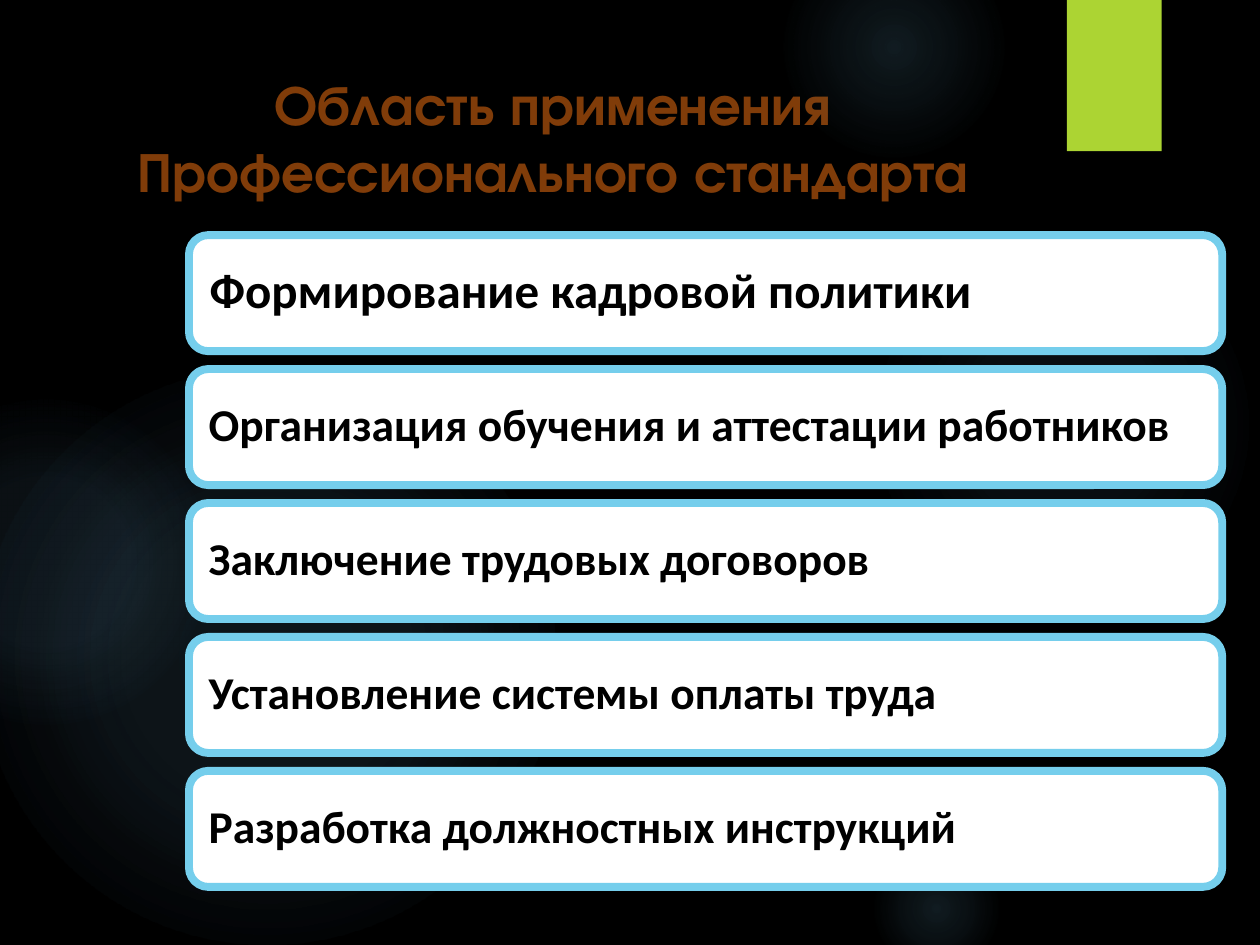
from dataclasses import dataclass

from pptx import Presentation
from pptx.dml.color import RGBColor
from pptx.enum.shapes import MSO_SHAPE
from pptx.enum.text import MSO_ANCHOR, PP_ALIGN
from pptx.oxml import parse_xml
from pptx.oxml.ns import nsdecls, qn
from pptx.util import Cm, Pt


@dataclass(frozen=True)
class Theme:
    background: str = "000000"
    glow: str = "7AC4F0"
    accent: str = "ACD433"
    title: str = "803C09"
    box_fill: str = "FFFFFF"
    box_line: str = "75CEEC"
    box_text: str = "000000"
    title_font: str = "TeX Gyre Adventor"
    box_font: str = "Calibri"
    title_size: int = 32
    lead_size: int = 28
    item_size: int = 26
    line_width: float = 4.5


def write_text(shape, text, *, font, size, color, align, anchor, inset, spacing=1.0):
    frame = shape.text_frame
    frame.word_wrap = True
    frame.vertical_anchor = anchor
    frame.margin_left = frame.margin_right = inset
    frame.margin_top = frame.margin_bottom = inset
    paragraph = frame.paragraphs[0]
    paragraph.alignment = align
    paragraph.line_spacing = spacing
    run = paragraph.add_run()
    run.text = text
    run.font.name = font
    run.font.size = Pt(size)
    run.font.bold = True
    run.font.color.rgb = RGBColor.from_string(color)


def fill_with_glow(shape, color, stops):
    stop_list = "".join(
        f'<a:gs pos="{position * 1000}"><a:srgbClr val="{color}">'
        f'<a:alpha val="{opacity * 1000}"/></a:srgbClr></a:gs>'
        for position, opacity in stops
    )
    gradient = parse_xml(
        f'<a:gradFill {nsdecls("a")} rotWithShape="1"><a:gsLst>{stop_list}</a:gsLst>'
        '<a:path path="circle"><a:fillToRect l="50000" t="50000" r="50000" b="50000"/>'
        "</a:path></a:gradFill>"
    )
    shape.fill.background()
    properties = shape._element.spPr
    properties.replace(properties.find(qn("a:noFill")), gradient)


theme = Theme()
presentation = Presentation()
presentation.slide_width = Cm(25.4)
presentation.slide_height = Cm(19.05)
slide = presentation.slides.add_slide(presentation.slide_layouts[5])
slide.background.fill.solid()
slide.background.fill.fore_color.rgb = RGBColor.from_string(theme.background)

glows = [
    (17.5, 4.65, 7.82, [(0, 7), (36, 6), (69, 0)]),
    (15.8, -1.27, 4.45, [(0, 14), (36, 7), (73, 0)]),
    (17.5, 16.94, 2.74, [(0, 14), (36, 7), (66, 0)]),
    (-0.43, 7.42, 11.63, [(0, 11), (36, 10), (75, 0)]),
    (-2.34, 8.05, 6.55, [(0, 8), (36, 8), (72, 0)]),
]
for left, top, diameter, stops in glows:
    glow = slide.shapes.add_shape(
        MSO_SHAPE.OVAL, Cm(left), Cm(top), Cm(diameter), Cm(diameter)
    )
    glow.shadow.inherit = False
    glow.line.fill.background()
    fill_with_glow(glow, theme.glow, stops)

accent = slide.shapes.add_shape(
    MSO_SHAPE.RECTANGLE, Cm(21.51), Cm(0), Cm(1.91), Cm(3.05)
)
accent.shadow.inherit = False
accent.fill.solid()
accent.fill.fore_color.rgb = RGBColor.from_string(theme.accent)
accent.line.fill.background()

title = slide.shapes.title
title.left, title.top, title.width, title.height = Cm(1.35), Cm(1.27), Cm(19.6), Cm(3.89)
write_text(
    title,
    "Область применения Профессионального стандарта",
    font=theme.title_font,
    size=theme.title_size,
    color=theme.title,
    align=PP_ALIGN.CENTER,
    anchor=MSO_ANCHOR.TOP,
    inset=Cm(0.13),
)

applications = [
    ("Формирование кадровой политики", theme.lead_size),
    ("Организация обучения и аттестации работников", theme.item_size),
    ("Заключение трудовых договоров", theme.item_size),
    ("Установление системы оплаты труда", theme.item_size),
    ("Разработка должностных инструкций", theme.item_size),
]
first_top, pitch = 4.74, 2.7
for index, (text, size) in enumerate(applications):
    box = slide.shapes.add_shape(
        MSO_SHAPE.ROUNDED_RECTANGLE,
        Cm(3.81), Cm(first_top + index * pitch), Cm(20.83), Cm(2.34),
    )
    box.shadow.inherit = False
    box.fill.solid()
    box.fill.fore_color.rgb = RGBColor.from_string(theme.box_fill)
    box.line.color.rgb = RGBColor.from_string(theme.box_line)
    box.line.width = Pt(theme.line_width)
    write_text(
        box,
        text,
        font=theme.box_font,
        size=size,
        color=theme.box_text,
        align=PP_ALIGN.LEFT,
        anchor=MSO_ANCHOR.MIDDLE,
        inset=Cm(size / 92),
        spacing=0.9,
    )

presentation.save("out.pptx")
